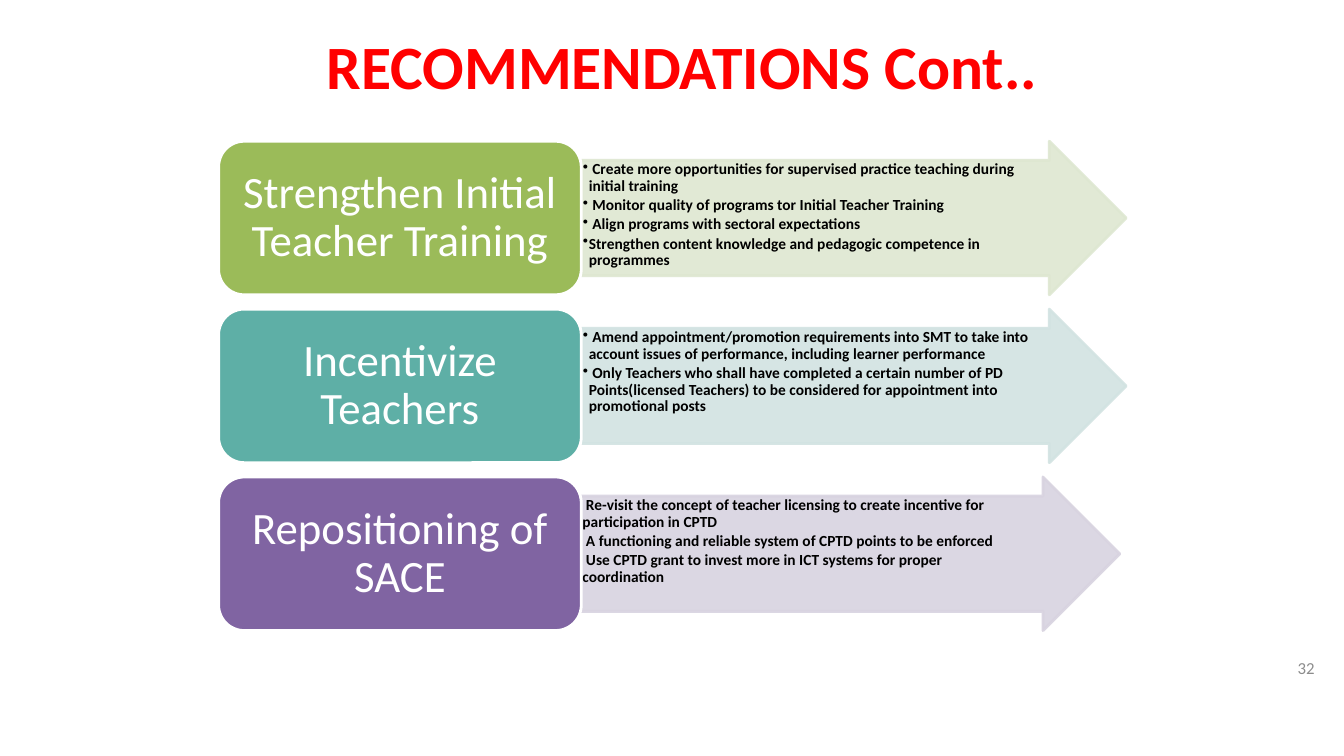
"""Build the recommendations slide with three labelled arrows."""
from dataclasses import dataclass

from lxml import etree
from pptx import Presentation
from pptx.dml.color import RGBColor
from pptx.dml.fill import FillFormat
from pptx.enum.shapes import MSO_SHAPE as Preset
from pptx.enum.text import MSO_ANCHOR as Anchor, PP_ALIGN as Align
from pptx.oxml.ns import qn
from pptx.shapes.autoshape import Shape
from pptx.slide import Slide
from pptx.text.text import _Paragraph as Paragraph
from pptx.util import Cm, Pt


@dataclass
class Recommendation:
    heading: str
    color: str
    tint: str
    points: list[str]
    arrow_left: float = 14.66
    bulleted: bool = True


RECOMMENDATIONS = [
    Recommendation("Strengthen Initial Teacher Training", "9BBB59", "DEE7D1", [
        " Create more opportunities for supervised practice teaching during initial training",
        " Monitor quality of programs tor Initial Teacher Training",
        " Align programs with sectoral expectations",
        "Strengthen content knowledge and pedagogic competence in programmes",
    ]),
    Recommendation("Incentivize Teachers", "5EAFA6", "D2E3E2", [
        " Amend appointment/promotion requirements into SMT to take into account issues of "
        "performance, including learner performance",
        " Only Teachers who shall have completed a certain number of PD Points(licensed Teachers) "
        "to be considered for appointment into promotional posts",
    ]),
    Recommendation("Repositioning of SACE", "8064A2", "D8D3E0", [
        " Re-visit the concept of teacher licensing to create incentive for participation in CPTD",
        " A functioning and reliable system of CPTD points to be enforced",
        " Use CPTD grant to invest more in ICT systems for proper coordination",
    ], arrow_left=14.5, bulleted=False),
]
FIRST_TOP, ROW_PITCH, ROW_HEIGHT = 3.56, 4.23, 3.87
BOX_LEFT, BOX_WIDTH, ARROW_WIDTH = 5.51, 9.14, 13.72


def rgb(color: str) -> RGBColor:
    return RGBColor.from_string(color)


def set_color(fill: FillFormat, color: str) -> None:
    fill.solid()
    fill.fore_color.rgb = rgb(color)


def set_font(paragraph: Paragraph, size: float, color: str, bold: bool = False) -> None:
    for run in paragraph.runs:
        run.font.name = "Calibri"
        run.font.size = Pt(size)
        run.font.bold = bold
        run.font.color.rgb = rgb(color)


def set_margins(shape: Shape, left: float, top: float, right: float, bottom: float) -> None:
    frame = shape.text_frame
    frame.word_wrap = True
    frame.margin_left, frame.margin_top = Cm(left), Cm(top)
    frame.margin_right, frame.margin_bottom = Cm(right), Cm(bottom)


def set_indent(paragraph: Paragraph, bulleted: bool) -> None:
    properties = paragraph._p.get_or_add_pPr()
    properties.set("marL", str(Cm(0.15)))
    properties.set("indent", str(-Cm(0.15) if bulleted else 0))
    if bulleted:
        etree.SubElement(properties, qn("a:buChar"), char="•")


def add_label(slide: Slide, text: str, left: float, top: float, width: float, height: float,
              align: Align, size: float, color: str, bold: bool = False) -> None:
    label = slide.shapes.add_textbox(Cm(left), Cm(top), Cm(width), Cm(height))
    frame = label.text_frame
    frame.word_wrap = True
    frame.vertical_anchor = Anchor.MIDDLE
    frame.text = text
    paragraph = frame.paragraphs[0]
    paragraph.alignment = align
    set_font(paragraph, size, color, bold)


def add_block(slide: Slide, preset: Preset, left: float, top: float, width: float,
              fill: str, line: str) -> Shape:
    block = slide.shapes.add_shape(preset, Cm(left), Cm(top), Cm(width), Cm(ROW_HEIGHT))
    block.shadow.inherit = False
    set_color(block.fill, fill)
    set_color(block.line.fill, line)
    block.line.width = Pt(2)
    return block


def add_arrow(slide: Slide, item: Recommendation, top: float) -> None:
    arrow = add_block(slide, Preset.RIGHT_ARROW, item.arrow_left, top, ARROW_WIDTH,
                      item.tint, item.tint)
    arrow.adjustments[0], arrow.adjustments[1] = 0.75, 0.5
    for color in arrow._element.spPr.iter(qn("a:srgbClr")):
        etree.SubElement(color, qn("a:alpha"), val="90000")
    set_margins(arrow, 0.03, 0.03, 0.99, 0.03)
    frame = arrow.text_frame
    frame.vertical_anchor = Anchor.TOP
    frame.text = "\n".join(item.points)
    for paragraph in frame.paragraphs:
        paragraph.alignment = Align.LEFT
        paragraph.line_spacing = 0.9
        paragraph.space_after = Pt(1.8)
        set_indent(paragraph, item.bulleted)
        set_font(paragraph, 11, "000000", bold=True)


def add_heading(slide: Slide, item: Recommendation, top: float) -> None:
    box = add_block(slide, Preset.ROUNDED_RECTANGLE, BOX_LEFT, top, BOX_WIDTH,
                    item.color, "FFFFFF")
    set_margins(box, 0.33, 0.17, 0.33, 0.17)
    frame = box.text_frame
    frame.vertical_anchor = Anchor.MIDDLE
    frame.text = item.heading
    paragraph = frame.paragraphs[0]
    paragraph.alignment = Align.CENTER
    paragraph.line_spacing = 0.9
    set_font(paragraph, 32, "FFFFFF")


def main() -> None:
    presentation = Presentation()
    presentation.slide_width, presentation.slide_height = Cm(33.87), Cm(19.05)
    slide = presentation.slides.add_slide(presentation.slide_layouts[6])
    add_label(slide, "RECOMMENDATIONS Cont..", 2.49, 0.05, 29.41, 3.18,
              Align.CENTER, 44, "FF0000", bold=True)
    for row, item in enumerate(RECOMMENDATIONS):
        top = FIRST_TOP + row * ROW_PITCH
        add_arrow(slide, item, top)
        add_heading(slide, item, top)
    add_label(slide, "32", 25.48, 16.33, 7.9, 1.02, Align.RIGHT, 12, "8C8C8C")
    presentation.save("out.pptx")


if __name__ == "__main__":
    main()
